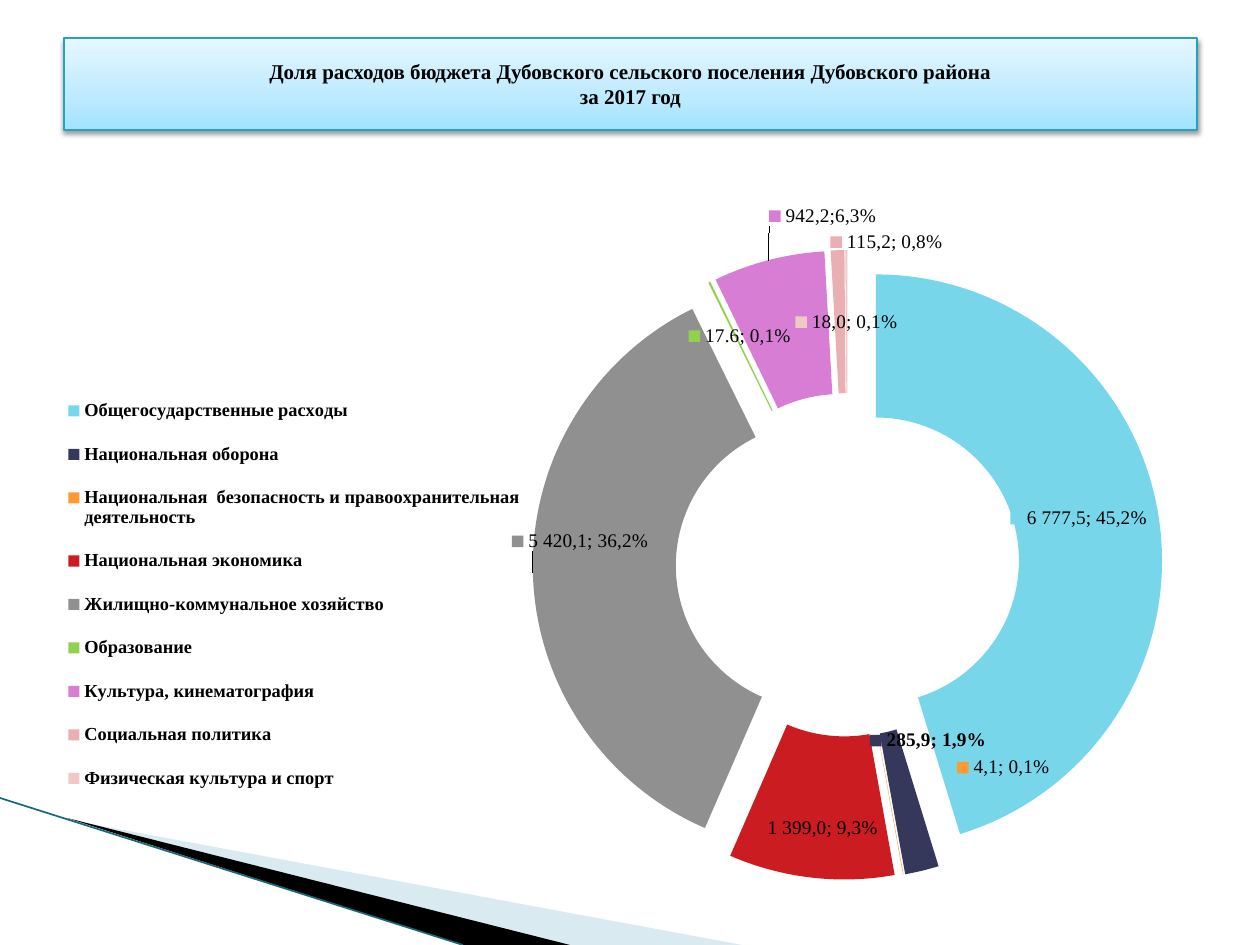
"""Build the 2017 budget expenditure slide with its exploded doughnut chart."""
from math import cos, pi, sin

from pptx import Presentation
from pptx.chart.data import CategoryChartData
from pptx.dml.color import RGBColor as RGB
from pptx.enum.chart import XL_CHART_TYPE as CT, XL_LEGEND_POSITION as LP
from pptx.enum.shapes import MSO_CONNECTOR as MC
from pptx.enum.text import MSO_ANCHOR as MA, MSO_AUTO_SIZE as MS, PP_ALIGN as PA
from pptx.oxml import parse_xml
from pptx.oxml.ns import nsdecls, qn
from pptx.util import Emu, Pt

SCALE = 914400 / 126
C = {
    "black": "000000", "wedge": "A0CBDC", "edge": "16697A", "frame": "28A1BE",
    "grad_low": "A1E3FF", "grad_mid": "BDEAFF", "grad_top": "E6F7FF",
    "state": "78D6EA", "defence": "35385A", "safety": "FF9933",
    "economy": "CB1C22", "housing": "909090", "education": "92D050",
    "culture": "D77DD3", "social": "EAAFB2", "sport": "EFC8C8",
}
ROWS = [
    ("Общегосударственные расходы", 6777.5, "6 777,5; 45,2%", "state", 1080, 518),
    ("Национальная оборона", 285.9, "285,9; 1,9%", "defence", 929, 741),
    ("Национальная  безопасность и правоохранительная деятельность", 4.1,
     "4,1; 0,1%", "safety", 1004, 768),
    ("Национальная экономика", 1399, "1 399,0; 9,3%", "economy", 815, 829),
    ("Жилищно-коммунальное хозяйство", 5420.1, "5 420,1; 36,2%", "housing", 580, 541),
    ("Образование", 17.6, "17.6; 0,1%", "education", 740, 335),
    ("Культура, кинематография", 942.2, "942,2;6,3%", "culture", 823, 215),
    ("Социальная политика", 115.2, "115,2; 0,8%", "social", 887, 241),
    ("Физическая культура и спорт", 18, "18,0; 0,1%", "sport", 847, 321),
]
CHART_X, CHART_Y, CHART_W, CHART_H = 56, 150, 1204, 798
RING_X, RING_Y, RING_MID = 848, 565, 244


def px(n):
    return Emu(round(n * SCALE))


def layout(target="", edge=True, **values):
    modes = '<c:xMode val="edge"/><c:yMode val="edge"/>' if edge else ""
    items = "".join(f'<c:{k} val="{v:.4f}"/>' for k, v in values.items())
    return parse_xml(f'<c:layout {nsdecls("c")}><c:manualLayout>{target}{modes}{items}'
                     "</c:manualLayout></c:layout>")


prs = Presentation()
prs.slide_width, prs.slide_height = px(1260), px(945)
s = prs.slides.add_slide(prs.slide_layouts[5])

for color, alpha, pts in (
    ("wedge", 40, [(69, 820), (742, 945), (568, 945)]),
    ("black", 100, [(67, 818), (570, 945), (463, 945)]),
):
    fb = s.shapes.build_freeform(*pts[0], scale=SCALE)
    fb.add_line_segments(pts[1:], close=True)
    sp = fb.convert_to_shape()
    sp.shadow.inherit = False
    sp.fill.solid()
    sp.fill.fore_color.rgb = RGB.from_string(C[color])
    sp.line.fill.background()
    clr = sp.element.spPr.find(".//" + qn("a:srgbClr"))
    clr.append(parse_xml(f'<a:alpha {nsdecls("a")} val="{alpha * 1000}"/>'))

ln = s.shapes.add_connector(MC.STRAIGHT, px(0), px(798), px(463), px(945))
ln.line.color.rgb = RGB.from_string(C["edge"])
ln.line.width = Pt(0.95)
ln.element.spPr.append(parse_xml(f'<a:effectLst {nsdecls("a")}/>'))

cd = CategoryChartData(number_format="0.0")
cd.categories = [row[0] for row in ROWS]
cd.add_series("Series 1", [row[1] for row in ROWS])
chart = s.shapes.add_chart(CT.DOUGHNUT, px(CHART_X), px(CHART_Y),
                           px(CHART_W), px(CHART_H), cd).chart
chart.has_title = False
chart.font.name, chart.font.size = "Courier New", Pt(18)
chart.font.color.rgb = RGB.from_string(C["black"])
plot = chart.plots[0]
plot.vary_by_categories = True

chart.has_legend = True
lg = chart.legend
lg.position, lg.include_in_layout = LP.TOP, False
fmt = {"name": "Times New Roman", "size": Pt(10.5), "bold": True}
for k, v in fmt.items():
    setattr(lg.font, k, v)

space = chart._chartSpace
for el in space.xpath(".//c:plotArea/c:layout | .//c:legend/c:layout"):
    el.getparent().remove(el)
space.find(".//" + qn("c:plotArea")).insert(0, layout(
    '<c:layoutTarget val="inner"/>', x=0.396, y=0.125, w=0.523, h=0.79))
space.find(".//" + qn("c:legendPos")).addnext(layout(x=0.003, y=0.285, w=0.39, h=0.545))
space.find(".//" + qn("c:ser")).find(qn("c:tx")).addnext(
    parse_xml(f'<c:explosion {nsdecls("c")} val="20"/>'))

ser = plot.series[0]
dl = ser.data_labels
fmt = {"show_value": True, "show_percentage": True, "show_legend_key": True,
       "number_format": "0.0", "number_format_is_linked": False}
for k, v in fmt.items():
    setattr(dl, k, v)
fmt = {"name": "Times New Roman", "size": Pt(11), "bold": True}
for k, v in fmt.items():
    setattr(dl.font, k, v)

total = sum(row[1] for row in ROWS)
for i, (name, value, text, color, x, y) in enumerate(ROWS):
    point = ser.points[i]
    point.format.fill.solid()
    point.format.fill.fore_color.rgb = RGB.from_string(C[color])
    point.format.line.fill.background()
    p = point.data_label.text_frame.paragraphs[0]
    r = p.add_run()
    r.text = text
    fmt = {"name": "Times New Roman", "size": Pt(11), "bold": color == "defence"}
    for k, v in fmt.items():
        setattr(r.font, k, v)
    r.font.color.rgb = RGB.from_string(C["black"])

done = 0
for lbl, (name, value, text, color, x, y) in zip(space.iter(qn("c:dLbl")), ROWS):
    angle = 2 * pi * (done + value / 2) / total
    done += value
    dx = x - RING_X - RING_MID * sin(angle)
    dy = y - RING_Y + RING_MID * cos(angle)
    lbl.find(qn("c:idx")).addnext(layout(edge=False, x=dx / CHART_W, y=dy / CHART_H))
    for tag in ("c:showLegendKey", "c:showPercent"):
        lbl.find(qn(tag)).set("val", "1")

sp = s.shapes.title
sp.left, sp.top, sp.width, sp.height = px(64), px(38), px(1133), px(92)
stops = "".join(f'<a:gs pos="{pos * 1000}"><a:srgbClr val="{C[key]}"/></a:gs>'
                for pos, key in ((0, "grad_low"), (35, "grad_mid"), (100, "grad_top")))
sp.element.spPr.append(parse_xml(
    f'<a:gradFill {nsdecls("a")}><a:gsLst>{stops}</a:gsLst>'
    '<a:lin ang="16200000" scaled="0"/></a:gradFill>'))
sp.line.color.rgb = RGB.from_string(C["frame"])
sp.line.width = Pt(0.75)
sp.element.spPr.append(parse_xml(
    f'<a:effectLst {nsdecls("a")}><a:outerShdw blurRad="{Pt(3.1)}" dist="{Pt(1.6)}" '
    f'dir="5400000" rotWithShape="0"><a:srgbClr val="{C["black"]}">'
    '<a:alpha val="38000"/></a:srgbClr></a:outerShdw></a:effectLst>'))
tf = sp.text_frame
tf.word_wrap, tf.auto_size, tf.vertical_anchor = True, MS.NONE, MA.MIDDLE
p = tf.paragraphs[0]
p.text = "Доля расходов бюджета Дубовского сельского поселения Дубовского района\vза 2017 год"
p.alignment = PA.CENTER
fmt = {"name": "Times New Roman", "size": Pt(12), "bold": True}
for r in p.runs:
    for k, v in fmt.items():
        setattr(r.font, k, v)
    r.font.color.rgb = RGB.from_string(C["black"])

prs.save("out.pptx")
